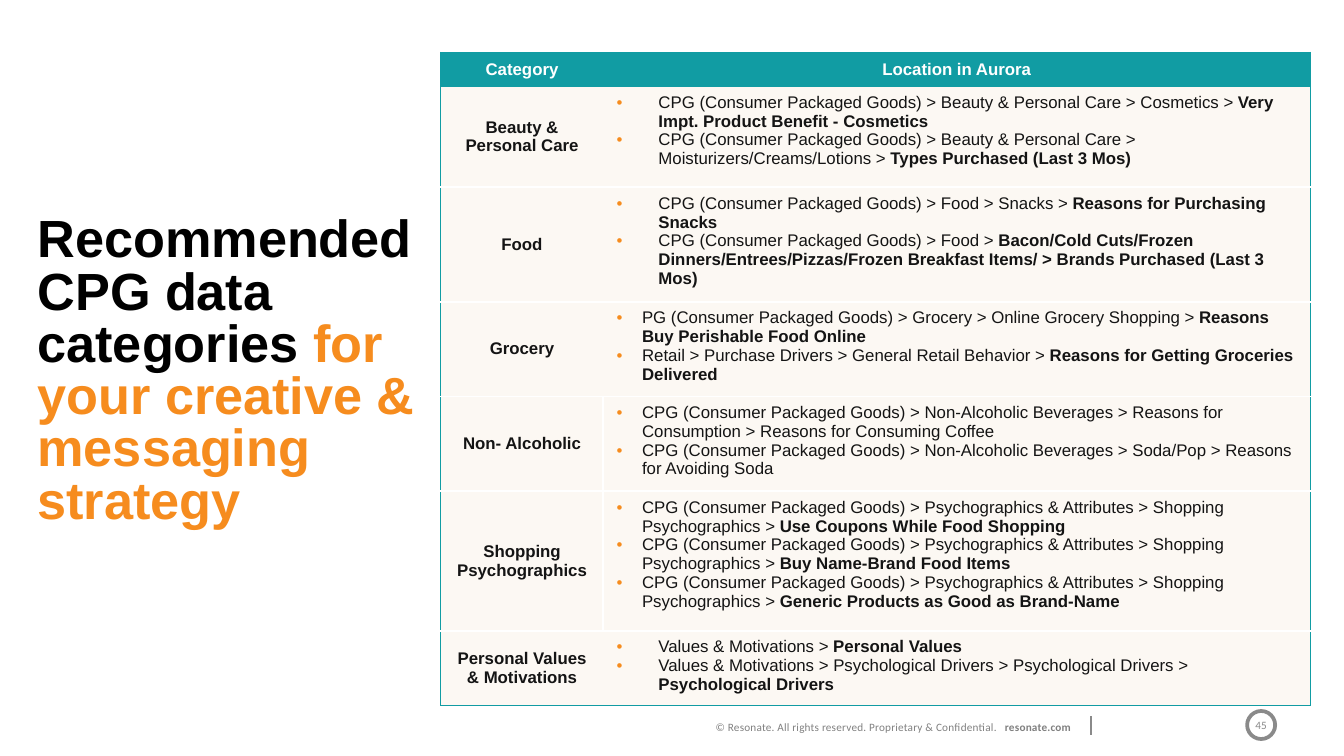
from lxml import etree
from pptx import Presentation
from pptx import util as u
from pptx.dml.color import RGBColor
from pptx.enum import shapes, text
from pptx.oxml import ns

COLORS = {"teal": "119CA3", "cream": "FCF8F3", "white": "FFFFFF", "ink": "141414",
          "black": "000000", "orange": "F68C1E", "red": "F84524",
          "gray": "808080", "ring": "8A8A8A"}
CPG = "CPG (Consumer Packaged Goods) > "
SHOPPING = CPG + "Psychographics & Attributes > Shopping Psychographics > "
WIDE, NARROW = 0.79, 0.48
HEADINGS = ("Category", "Location in Aurora")
HEADER_HEIGHT = 0.64
COLUMN_WIDTHS = (3.07, 13.36)

# category, row height, bullet indent, line between columns, (plain, bold) entries
CATEGORIES = [
    ("Beauty & Personal Care", 1.91, WIDE, False, [
        (CPG + "Beauty & Personal Care > Cosmetics > ", "Very Impt. Product Benefit - Cosmetics"),
        (CPG + "Beauty & Personal Care > Moisturizers/Creams/Lotions > ",
         "Types Purchased (Last 3 Mos)")]),
    ("Food", 2.16, WIDE, False, [
        (CPG + "Food > Snacks > ", "Reasons for Purchasing Snacks"),
        (CPG + "Food > ", "Bacon/Cold Cuts/Frozen Dinners/Entrees/Pizzas/"
         "Frozen Breakfast Items/ > Brands Purchased (Last 3 Mos)")]),
    ("Grocery", 1.79, NARROW, False, [
        ("PG (Consumer Packaged Goods) > Grocery > Online Grocery Shopping > ",
         "Reasons Buy Perishable Food Online"),
        ("Retail > Purchase Drivers > General Retail Behavior > ",
         "Reasons for Getting Groceries Delivered")]),
    ("Non- Alcoholic", 1.79, NARROW, True, [
        (CPG + "Non-Alcoholic Beverages > Reasons for Consumption > "
         "Reasons for Consuming Coffee", ""),
        (CPG + "Non-Alcoholic Beverages > Soda/Pop > Reasons for Avoiding Soda", "")]),
    ("Shopping Psychographics", 2.64, NARROW, True, [
        (SHOPPING, "Use Coupons While Food Shopping"),
        (SHOPPING, "Buy Name-Brand Food Items"),
        (SHOPPING, "Generic Products as Good as Brand-Name")]),
    ("Personal Values & Motivations", 1.41, WIDE, False, [
        ("Values & Motivations > ", "Personal Values"),
        ("Values & Motivations > Psychological Drivers > Psychological Drivers > ",
         "Psychological Drivers")]),
]


def rgb(name):
    return RGBColor.from_string(COLORS[name])


def add_run(paragraph, words, size, color, bold=False, name="Arial", spacing=None):
    run = paragraph.add_run()
    run.text = words
    run.font.size = u.Pt(size)
    run.font.name = name
    run.font.bold = bold
    run.font.color.rgb = rgb(color)
    if spacing is not None:
        run._r.get_or_add_rPr().set("spc", str(spacing))
    return run


def add_bullet(paragraph, indent):
    properties = paragraph._p.get_or_add_pPr()
    properties.set("marL", str(u.Cm(indent)))
    properties.set("indent", str(-u.Cm(indent)))
    color = etree.SubElement(properties, ns.qn("a:buClr"))
    etree.SubElement(color, ns.qn("a:srgbClr"), val=COLORS["orange"])
    etree.SubElement(properties, ns.qn("a:buFont"), typeface="Arial")
    etree.SubElement(properties, ns.qn("a:buChar"), char="•")


def style_cell(cell, fill, borders):
    properties = cell._tc.get_or_add_tcPr()
    for side in "LRTB":
        if side in borders:
            color, width = borders[side]
            line = etree.SubElement(properties, ns.qn(f"a:ln{side}"), w=str(u.Pt(width)))
            paint = etree.SubElement(line, ns.qn("a:solidFill"))
            etree.SubElement(paint, ns.qn("a:srgbClr"), val=COLORS[color])
    cell.fill.solid()
    cell.fill.fore_color.rgb = rgb(fill)


def write_label(cell, words, color):
    cell.vertical_anchor = text.MSO_ANCHOR.MIDDLE
    paragraph = cell.text_frame.paragraphs[0]
    paragraph.alignment = text.PP_ALIGN.CENTER
    add_run(paragraph, words, 9, color, True)


def write_entries(cell, entries, indent):
    frame = cell.text_frame
    for index, (plain, bold) in enumerate(entries):
        paragraph = frame.add_paragraph() if index else frame.paragraphs[0]
        add_bullet(paragraph, indent)
        add_run(paragraph, plain, 9, "ink")
        if bold:
            add_run(paragraph, bold, 9, "ink", True)


def add_title(slide, left, top, width, height):
    box = slide.shapes.add_textbox(u.Cm(left), u.Cm(top), u.Cm(width), u.Cm(height))
    box.text_frame.word_wrap = True
    paragraph = box.text_frame.paragraphs[0]
    paragraph.line_spacing = u.Pt(28)
    add_run(paragraph, "Recommended CPG data categories ", 28, "black", True)
    for words, angle in (("for your ", 135), ("creative", 0), (" & ", 135),
                         ("messaging", 45), (" strategy", 135)):
        fill = add_run(paragraph, words, 28, "orange", True).font.fill
        fill.gradient()
        fill.gradient_angle = -angle % 360
        for stop, color, position in zip(fill.gradient_stops, ("orange", "red"), (0.74, 1)):
            stop.color.rgb = rgb(color)
            stop.position = position


def add_category_table(slide, left, top, width, height):
    frame = slide.shapes.add_table(len(CATEGORIES) + 1, len(HEADINGS), u.Cm(left), u.Cm(top),
                                   u.Cm(width), u.Cm(height))
    table = frame.table
    table.horz_banding = False
    style = table._tbl.tblPr.find(ns.qn("a:tableStyleId"))
    style.text = "{2D5ABB26-0587-4C30-8999-92F81FD0307C}"
    for column, column_width in zip(table.columns, COLUMN_WIDTHS):
        column.width = u.Cm(column_width)
    outer, inner = ("teal", 0.75), ("white", 1)

    table.rows[0].height = u.Cm(HEADER_HEIGHT)
    for index, (heading, side) in enumerate(zip(HEADINGS, "LR")):
        cell = table.cell(0, index)
        write_label(cell, heading, "white")
        style_cell(cell, "teal", {side: outer, "T": outer, "B": outer})

    for row, (category, row_height, indent, divided, entries) in enumerate(CATEGORIES, 1):
        table.rows[row].height = u.Cm(row_height)
        label, location = table.cell(row, 0), table.cell(row, 1)
        write_label(label, category, "ink")
        write_entries(location, entries, indent)
        edges = {"T": outer if row == 1 else inner,
                 "B": outer if row == len(CATEGORIES) else inner}
        divider = inner if divided else None
        for cell, outside, inside in ((label, "L", "R"), (location, "R", "L")):
            borders = {**edges, outside: outer}
            if divider:
                borders[inside] = divider
            style_cell(cell, "cream", borders)


def add_footer(slide, left, top, width, height):
    box = slide.shapes.add_textbox(u.Cm(left), u.Cm(top + 0.05), u.Cm(20.9), u.Cm(height))
    box.text_frame.word_wrap = True
    paragraph = box.text_frame.paragraphs[0]
    paragraph.alignment = text.PP_ALIGN.RIGHT
    for words, bold, spacing in (
            ("© Resonate. All rights reserved. Proprietary & Confidential.", False, 10),
            (" ", False, 290), ("resonate.com ", True, 10)):
        add_run(paragraph, words, 6, "gray", bold, "Calibri", spacing)

    divider_x = u.Cm(left + 20.98)
    divider = slide.shapes.add_connector(shapes.MSO_CONNECTOR.STRAIGHT, divider_x,
                                         u.Cm(top + 0.1), divider_x, u.Cm(top + 0.45))
    divider.line.color.rgb = rgb("ring")
    divider.line.width = u.Pt(0.75)
    etree.SubElement(divider._element.spPr, ns.qn("a:effectLst"))

    badge = slide.shapes.add_shape(shapes.MSO_SHAPE.OVAL, u.Cm(left + width - height), u.Cm(top),
                                   u.Cm(height), u.Cm(height))
    badge.shadow.inherit = False
    badge.fill.background()
    badge.line.color.rgb = rgb("ring")
    badge.line.width = u.Pt(2)
    frame = badge.text_frame
    frame.word_wrap = False
    frame.vertical_anchor = text.MSO_ANCHOR.MIDDLE
    frame.margin_left = frame.margin_right = frame.margin_top = frame.margin_bottom = 0
    frame.paragraphs[0].alignment = text.PP_ALIGN.CENTER
    add_run(frame.paragraphs[0], "45", 6, "ring", name="Calibri")


def main():
    presentation = Presentation()
    presentation.slide_width, presentation.slide_height = u.Cm(25.4), u.Cm(14.29)
    slide = presentation.slides.add_slide(presentation.slide_layouts[6])
    add_footer(slide, -0.36, 13.44, 24.46, 0.53)
    add_title(slide, 0.46, 3.96, 7.67, 5.69)
    add_category_table(slide, 8.33, 0.99, 16.43, 12.34)
    presentation.save("out.pptx")


if __name__ == "__main__":
    main()
